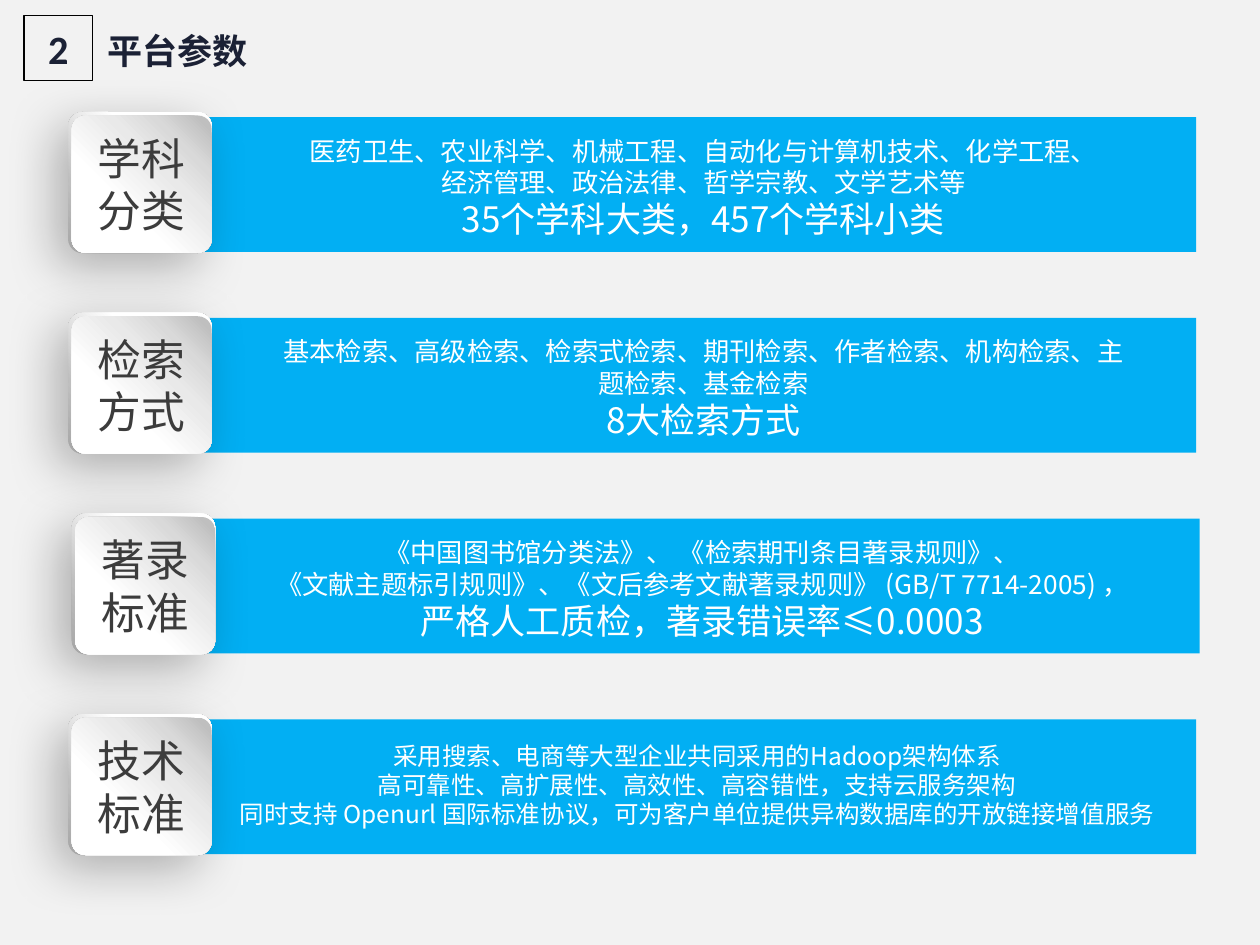
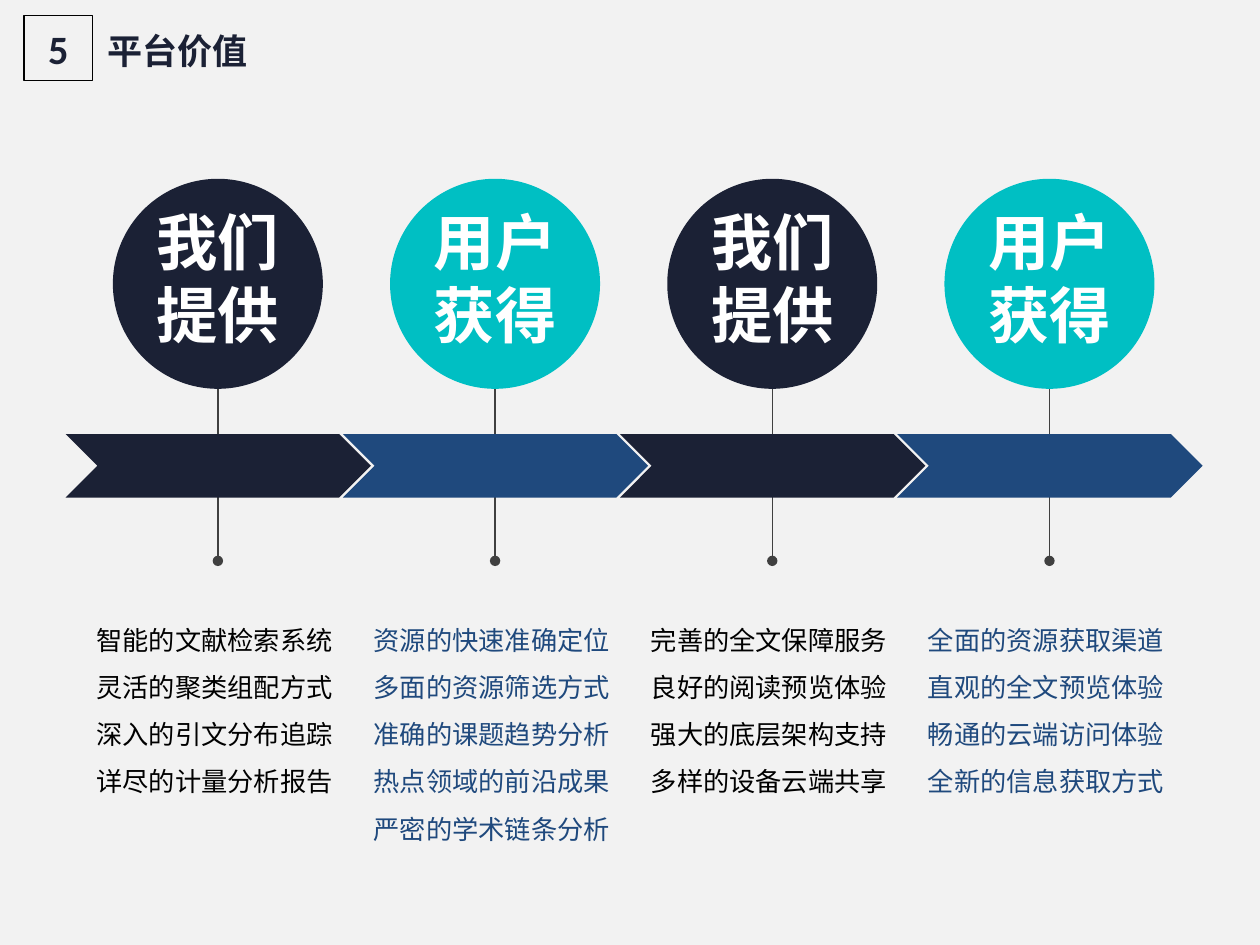
from lxml import etree
from pptx import Presentation
from pptx.dml.color import RGBColor
from pptx.enum.shapes import MSO_CONNECTOR, MSO_SHAPE
from pptx.enum.text import MSO_ANCHOR, MSO_AUTO_SIZE, PP_ALIGN
from pptx.oxml import parse_xml
from pptx.oxml.ns import nsdecls, qn
from pptx.util import Pt

# Content: label, text left, text width, text drop below the bar top, lines with sizes
PARAMETERS = [
    ("学科分类", 150.5, 503, 6.5, [
        ("医药卫生、农业科学、机械工程、自动化与计算机技术、化学工程、", 15),
        ("经济管理、政治法律、哲学宗教、文学艺术等", 15),
        ("35个学科大类，457个学科小类", 20)]),
    ("检索方式", 150.5, 503, 6.5, [
        ("基本检索、高级检索、检索式检索、期刊检索、作者检索、机构检索、主题检索、基金检索", 15),
        ("8大检索方式", 20)]),
    ("著录标准", 125.3, 552, 6.5, [
        ("《中国图书馆分类法》、 《检索期刊条目著录规则》、", 15),
        ("《文献主题标引规则》、《文后参考文献著录规则》 (GB/T 7714-2005) ，", 15),
        ("严格人工质检，著录错误率≤0.0003", 20)]),
    ("技术标准", 122.4, 552, 8.5, [
        ("采用搜索、电商等大型企业共同采用的Hadoop架构体系", 14),
        ("高可靠性、高扩展性、高效性、高容错性，支持云服务架构", 14),
        ("同时支持 Openurl 国际标准协议，可为客户单位提供异构数据库的开放链接增值服务", 14)]),
]
WE_PROVIDE, USERS_GET = ["我们", "提供"], ["用户", "获得"]
VALUES = [
    (WE_PROVIDE, ["智能的文献检索系统", "灵活的聚类组配方式", "深入的引文分布追踪", "详尽的计量分析报告"]),
    (USERS_GET, ["资源的快速准确定位", "多面的资源筛选方式", "准确的课题趋势分析",
                 "热点领域的前沿成果", "严密的学术链条分析"]),
    (WE_PROVIDE, ["完善的全文保障服务", "良好的阅读预览体验", "强大的底层架构支持", "多样的设备云端共享"]),
    (USERS_GET, ["全面的资源获取渠道", "直观的全文预览体验", "畅通的云端访问体验", "全新的信息获取方式"]),
]

# Shared style
CJK, LATIN = "Noto Sans CJK SC", "Calibri"
PAPER = RGBColor(0xF2, 0xF2, 0xF2)
WHITE = RGBColor(0xFF, 0xFF, 0xFF)
BLACK = RGBColor(0, 0, 0)
NAVY = RGBColor(0x1B, 0x21, 0x35)
SKY = RGBColor(0x02, 0xAF, 0xF3)
TEAL = RGBColor(0x00, 0xBF, 0xC3)
BLUE = RGBColor(0x1F, 0x49, 0x7D)
CHARCOAL = RGBColor(0x3C, 0x3C, 0x3C)
STEM = RGBColor(0x40, 0x40, 0x40)
RIM_STOPS = [(0, "FFFFFF"), (35, "FFFFFF"), (74, "BFBFBF"), (100, "A6A6A6")]
FACE_STOPS = [(0, "FFFFFF"), (35, "FFFFFF"), (63, "E9E9E9"), (79, "D9D9D9"), (95, "BFBFBF")]


def write(sp, lines, color, size=None, font=CJK, bold=False, align=PP_ALIGN.CENTER,
          spacing=None, anchor=MSO_ANCHOR.TOP, wrap=True):
    """Fill a shape with lines, each a string or a (string, size) pair."""
    tf = sp.text_frame
    tf.word_wrap, tf.auto_size, tf.vertical_anchor = wrap, MSO_AUTO_SIZE.NONE, anchor
    for i, line in enumerate(lines):
        text, points = (line, size) if isinstance(line, str) else line
        p = tf.add_paragraph() if i else tf.paragraphs[0]
        p.text, p.alignment = text, align
        if spacing:
            p.line_spacing = spacing
        f = p.font
        f.size, f.bold, f.name, f.color.rgb = Pt(points), bold, font, color
        latin = p._p.pPr.find(qn("a:defRPr")).find(qn("a:latin"))
        ea = etree.Element(qn("a:ea"), typeface=CJK)
        latin.addnext(ea)


def add_shape(slide, kind, x, y, w, h, fill=None, line=None):
    sp = slide.shapes.add_shape(kind, Pt(x), Pt(y), Pt(w), Pt(h))
    sp.shadow.inherit = False
    if fill is None:
        sp.fill.background()
    else:
        sp.fill.solid()
        sp.fill.fore_color.rgb = fill
    if line is None:
        sp.line.fill.background()
    else:
        sp.line.color.rgb, sp.line.width = line, Pt(0.75)
    return sp


def add_text(slide, x, y, w, h, lines, color, **style):
    write(slide.shapes.add_textbox(Pt(x), Pt(y), Pt(w), Pt(h)), lines, color, **style)


def add_tile(slide, x, y, w, h, stops, focus):
    """Rounded tile with a radial gradient that starts in one corner."""
    sp = add_shape(slide, MSO_SHAPE.ROUNDED_RECTANGLE, x, y, w, h, WHITE)
    sp.adjustments[0] = 0.1
    gs = "".join(f'<a:gs pos="{pos * 1000}"><a:srgbClr val="{c}"/></a:gs>' for pos, c in stops)
    gradient = parse_xml(
        f'<a:gradFill {nsdecls("a")} rotWithShape="1"><a:gsLst>{gs}</a:gsLst>'
        f'<a:path path="circle"><a:fillToRect {focus}/></a:path></a:gradFill>')
    solid = sp._element.spPr.find(qn("a:solidFill"))
    solid.getparent().replace(solid, gradient)
    return sp


def add_soft_shadow(sp):
    sp._element.spPr.find(qn("a:effectLst")).append(parse_xml(
        f'<a:outerShdw {nsdecls("a")} blurRad="{Pt(29)}" dist="{Pt(11)}" dir="{133 * 60000}" '
        'algn="tr" rotWithShape="0"><a:srgbClr val="000000"><a:alpha val="27000"/>'
        '</a:srgbClr></a:outerShdw>'))


def add_stem(slide, x, top, bottom):
    """Thin vertical line that ends in a dot."""
    cxn = slide.shapes.add_connector(MSO_CONNECTOR.STRAIGHT, Pt(x), Pt(top), Pt(x), Pt(bottom))
    cxn.line.color.rgb, cxn.line.width = STEM, Pt(0.75)
    etree.SubElement(cxn.line._get_or_add_ln(), qn("a:tailEnd"), type="oval")
    etree.SubElement(cxn._element.spPr, qn("a:effectLst"))


def new_slide(prs, number, title):
    slide = prs.slides.add_slide(prs.slide_layouts[5])
    sp = slide.shapes.title
    sp.left, sp.top, sp.width, sp.height = Pt(54), Pt(11.5), Pt(333), Pt(32)
    write(sp, [title], NAVY, size=20, bold=True, align=PP_ALIGN.LEFT, spacing=1.1,
          anchor=MSO_ANCHOR.MIDDLE)
    badge = add_shape(slide, MSO_SHAPE.RECTANGLE, 13.8, 8.7, 39, 37.5, line=BLACK)
    write(badge, [number], NAVY, size=23, font=LATIN, bold=True, anchor=MSO_ANCHOR.MIDDLE)
    return slide


def build_parameters(prs):
    slide = new_slide(prs, "2", "平台参数")
    for i, (label, text_x, text_w, drop, lines) in enumerate(PARAMETERS):
        x = 41 if i == 2 else 39  # the third row sits slightly to the right
        y = 64 + 114.7 * i
        bar_y = y + 3
        add_shape(slide, MSO_SHAPE.RECTANGLE, x + 75, bar_y, 569.5, 77, SKY)
        rim = add_tile(slide, x, y, 82, 80.6, RIM_STOPS, 'l="100000" b="100000"')
        add_soft_shadow(rim)
        face = add_tile(slide, x + 2, y + 2, 80, 78.5, FACE_STOPS, 't="100000" r="100000"')
        write(face, [label], CHARCOAL, size=25, anchor=MSO_ANCHOR.MIDDLE)
        add_text(slide, text_x, bar_y + drop, text_w, 67.5, lines, WHITE)


def build_values(prs):
    slide = new_slide(prs, "5", "平台价值")
    columns = [(124.5 + 158.4 * i, i % 2, *value) for i, value in enumerate(VALUES)]
    # Stems lie behind the circles and the arrow band
    for cx, *_ in columns:
        add_stem(slide, cx, 204.5, 320.5)
    for cx, is_user, heading, points in columns:
        add_shape(slide, MSO_SHAPE.OVAL, cx - 60, 102.2, 120, 120, TEAL if is_user else NAVY)
        add_shape(slide, MSO_SHAPE.CHEVRON, cx - 87, 248, 174.5, 36.3, BLUE if is_user else NAVY)
        add_text(slide, cx - 42.5, 113, 85, 92, heading, WHITE, size=35, font=LATIN,
                 bold=True, wrap=False)
        add_text(slide, cx - 76.5, 344, 153.5, 27 * len(points) + 8, points,
                 BLUE if is_user else BLACK, size=15, align=PP_ALIGN.LEFT, spacing=1.5)


def main():
    prs = Presentation()
    prs.slide_width, prs.slide_height = Pt(720), Pt(540)
    background = prs.slide_master.background.fill
    background.solid()
    background.fore_color.rgb = PAPER
    build_parameters(prs)
    build_values(prs)
    prs.save("out.pptx")


if __name__ == "__main__":
    main()
